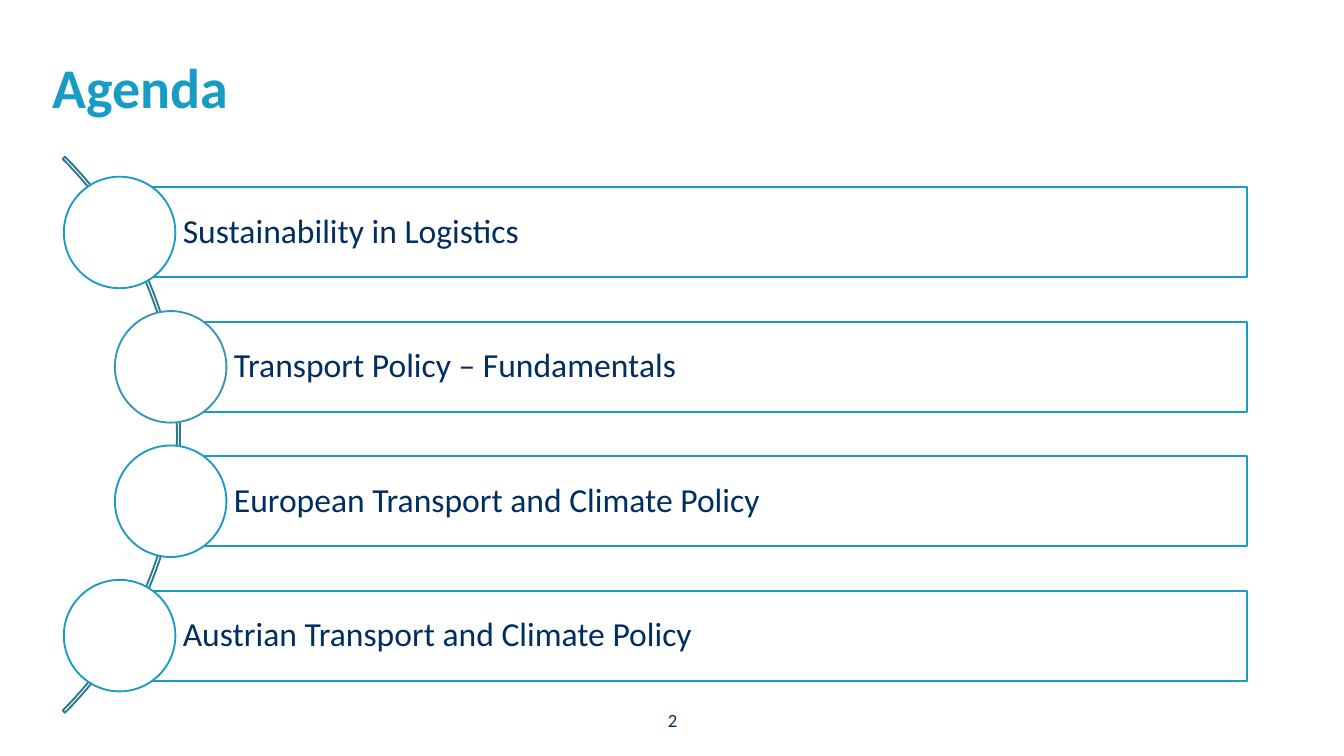
from pptx import Presentation
from pptx.dml.color import RGBColor
from pptx.enum.shapes import MSO_SHAPE as Shape
from pptx.enum.text import MSO_ANCHOR as Anchor, PP_ALIGN as Align
from pptx.util import Inches, Pt

FONT = "Calibri"
COLORS = {
    "accent": "189BC4",
    "accent_soft": "3494BA",
    "arc": "2A7795",
    "text": "002E60",
    "white": "FFFFFF",
}

# Topic, left edge of its bar, circle outline
TOPICS = [
    ("Sustainability in Logistics", 0.89, "accent"),
    ("Transport Policy – Fundamentals", 1.27, "accent_soft"),
    ("European Transport and Climate Policy", 1.27, "accent"),
    ("Austrian Transport and Climate Policy", 0.89, "accent"),
]
FIRST_CENTER, PITCH = 1.73, 1.0
BAR_RIGHT, BAR_HEIGHT = 9.28, 0.67
CIRCLE = 0.83


def rgb(name):
    return RGBColor.from_string(COLORS[name])


def add_outline(s, kind, x, y, w, h, line, fill=None):
    sp = s.shapes.add_shape(kind, Inches(x), Inches(y), Inches(w), Inches(h))
    sp.shadow.inherit = False
    if fill:
        sp.fill.solid()
        sp.fill.fore_color.rgb = rgb(fill)
    else:
        sp.fill.background()
    sp.line.color.rgb = rgb(line)
    sp.line.width = Pt(1)
    return sp


def set_text(sp, text, size, color="text", bold=False, align=Align.LEFT,
             anchor=Anchor.MIDDLE, insets=(0, 0, 0, 0)):
    tf = sp.text_frame
    tf.word_wrap = True
    tf.vertical_anchor = anchor
    tf.margin_left, tf.margin_top, tf.margin_right, tf.margin_bottom = map(Inches, insets)
    p = tf.paragraphs[0]
    p.alignment = align
    r = p.add_run()
    r.text = text
    r.font.name = FONT
    r.font.size = Pt(size)
    r.font.bold = bold
    r.font.color.rgb = rgb(color)
    return p


def add_label(s, x, y, w, h, text, size, **style):
    sp = s.shapes.add_textbox(Inches(x), Inches(y), Inches(w), Inches(h))
    set_text(sp, text, size, **style)


def add_arc(s):
    sp = add_outline(s, Shape.BLOCK_ARC, -4.51, 0.31, 5.85, 5.85, "arc")
    # Start angle, end angle, band thickness
    for i, value in enumerate((189, 27, 0.004)):
        sp.adjustments[i] = value


def add_topic(s, center, text, left, circle_line):
    bar = add_outline(s, Shape.RECTANGLE, left, center - BAR_HEIGHT / 2,
                      BAR_RIGHT - left, BAR_HEIGHT, "accent")
    p = set_text(bar, text, 18, insets=(0.47, 0.08, 0.08, 0.08))
    p.line_spacing = 0.9
    # The circle is centred on the left edge of the bar
    add_outline(s, Shape.OVAL, left - CIRCLE / 2, center - CIRCLE / 2,
                CIRCLE, CIRCLE, circle_line, fill="white")


def main():
    prs = Presentation()
    # Widescreen, 16:9
    prs.slide_width, prs.slide_height = Inches(10), Inches(10 * 9 / 16)
    s = prs.slides.add_slide(prs.slide_layouts[6])

    # Title and page number
    add_label(s, 0.39, 0.39, 8.27, 1.02, "Agenda", 30,
              color="accent", bold=True, anchor=Anchor.TOP)
    add_label(s, 4.61, 5.2, 0.79, 0.31, "2", 10, align=Align.CENTER)

    # Agenda topics along the arc
    add_arc(s)
    for i, (text, left, circle_line) in enumerate(TOPICS):
        add_topic(s, FIRST_CENTER + i * PITCH, text, left, circle_line)

    prs.save("out.pptx")


if __name__ == "__main__":
    main()
